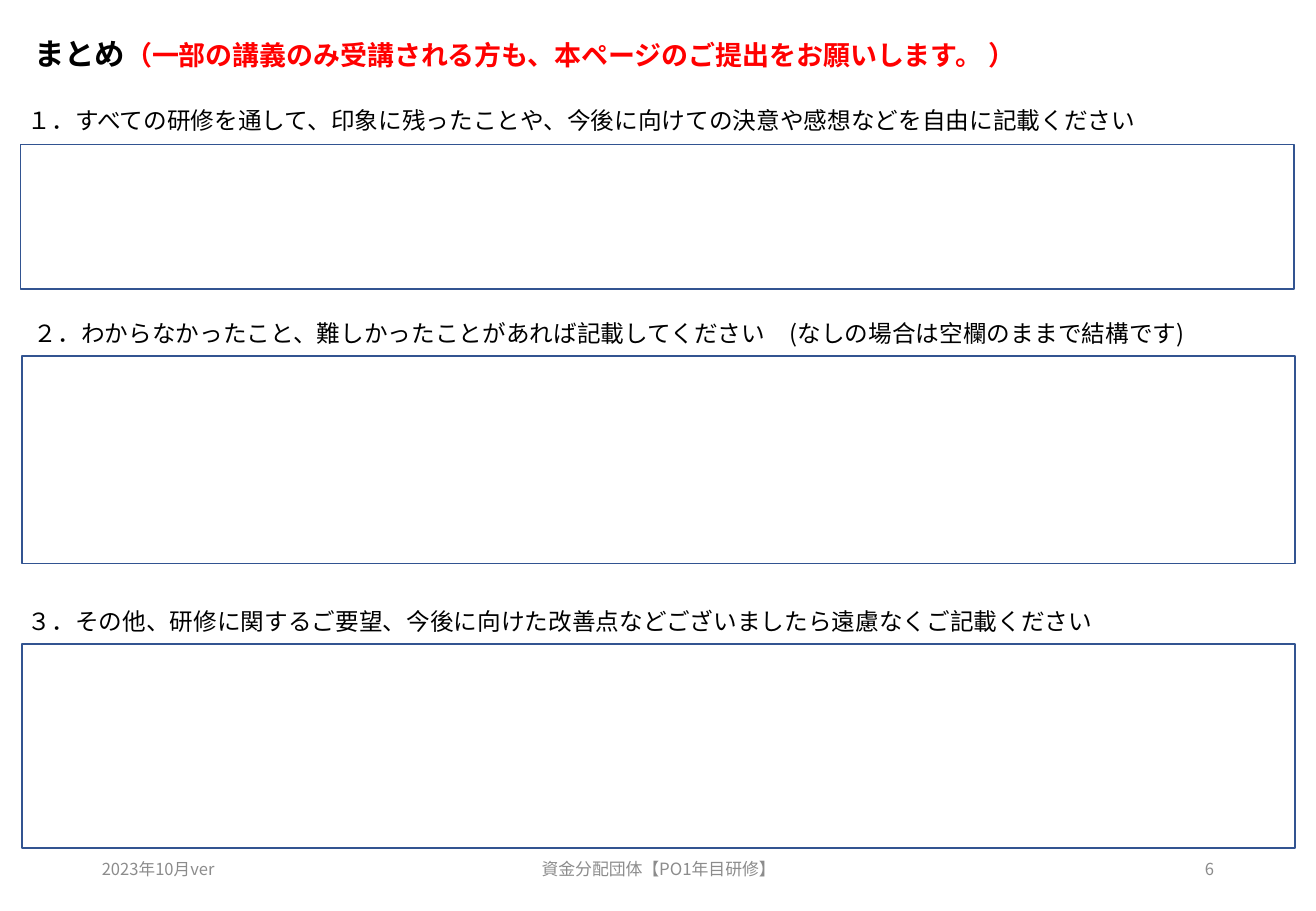
"""Build the summary page of a training worksheet."""
from dataclasses import dataclass
from typing import Any

from lxml import etree
from pptx import Presentation
from pptx.dml.color import RGBColor
from pptx.enum.shapes import MSO_SHAPE
from pptx.enum.text import MSO_ANCHOR, MSO_AUTO_SIZE, PP_ALIGN
from pptx.oxml.ns import qn
from pptx.util import Inches, Pt

RECT = MSO_SHAPE.RECTANGLE
TOP, MIDDLE = MSO_ANCHOR.TOP, MSO_ANCHOR.MIDDLE
LEFT, CENTER, RIGHT = PP_ALIGN.LEFT, PP_ALIGN.CENTER, PP_ALIGN.RIGHT
FIXED = MSO_AUTO_SIZE.NONE
WIDE, HIGH = Inches(10.83), Inches(7.5)


@dataclass(frozen=True)
class Theme:
    """Hold the colours, font and type sizes."""
    face: str = "Noto Sans CJK JP"
    ink: str = "000000"
    alert: str = "FF0000"
    muted: str = "8C8C8C"
    paper: str = "FFFFFF"
    edge: str = "325491"
    head: float = 18
    note: float = 16
    body: float = 14
    foot: float = 10
    small: float = 9.8


@dataclass(frozen=True)
class Area:
    """Give a place in percent of the slide's width and height."""
    x: float
    y: float
    w: float
    h: float

    def frame(self) -> dict[str, int]:
        """Turn the shares into shape lengths."""
        return {"left": int(WIDE * self.x / 100), "top": int(HIGH * self.y / 100),
                "width": int(WIDE * self.w / 100), "height": int(HIGH * self.h / 100)}


@dataclass(frozen=True)
class Topic:
    """Describe a question and its answer box."""
    text: str
    label: Area
    box: Area


@dataclass(frozen=True)
class Foot:
    """Describe one part of the footer."""
    text: str
    x: float
    w: float
    size: float
    align: Any


THEME = Theme()
SPAN, LINE = 96.77, 4.53
TITLE = Area(1.66, -0.53, 91.6, 13.2)
TOPICS = (
    Topic("１．すべての研修を通して、印象に残ったことや、今後に向けての決意や感想などを自由に記載ください",
          Area(1.2, 10.93, SPAN, LINE), Area(1.57, 15.87, SPAN, 15.87)),
    Topic("２．わからなかったこと、難しかったことがあれば記載してください　(なしの場合は空欄のままで結構です)",
          Area(1.66, 34.4, SPAN, LINE), Area(1.66, 39.07, SPAN, 22.8)),
    Topic("３．その他、研修に関するご要望、今後に向けた改善点などございましたら遠慮なくご記載ください",
          Area(1.2, 66, SPAN, LINE), Area(1.66, 70.67, SPAN, 22.4)),
)
FEET = (
    Foot("2023年10月ver", 6.83, 22.53, THEME.small, LEFT),
    Foot("資金分配団体【PO1年目研修】", 33.15, 33.8, THEME.foot, CENTER),
    Foot("6", 70.64, 22.53, THEME.small, RIGHT),
)


def apply(item: Any, values: dict[str, Any]) -> None:
    """Set each named value on the item."""
    for name, value in values.items():
        setattr(item, name, value)


def add_run(para: Any, text: str, size: float, tint: str, bold: bool = False) -> None:
    """Add a styled run with Latin and East Asian fonts."""
    run = para.add_run()
    run.text = text
    apply(run.font, {"name": THEME.face, "size": Pt(size), "bold": bold})
    run.font.color.rgb = RGBColor.from_string(tint)
    east = etree.Element(qn("a:ea"), typeface=THEME.face)
    run.font._element.find(qn("a:latin")).addnext(east)


def add_label(slide: Any, area: Area, text: str, size: float, tint: str,
              align: Any = LEFT, anchor: Any = TOP) -> None:
    """Add one line of text in its area."""
    shape = slide.shapes.add_textbox(**area.frame())
    apply(shape.text_frame, {"word_wrap": True, "vertical_anchor": anchor})
    para = shape.text_frame.paragraphs[0]
    para.alignment = align
    add_run(para, text, size, tint)


def add_box(slide: Any, area: Area) -> None:
    """Add an empty answer box."""
    box = slide.shapes.add_shape(RECT, **area.frame())
    box.shadow.inherit = False
    box.fill.solid()
    box.fill.fore_color.rgb = RGBColor.from_string(THEME.paper)
    box.line.color.rgb = RGBColor.from_string(THEME.edge)
    box.line.width = Pt(1)


def add_title(slide: Any) -> None:
    """Place and fill the title."""
    title = slide.shapes.title
    apply(title, TITLE.frame())
    apply(title.text_frame, {"word_wrap": True, "auto_size": FIXED,
                             "vertical_anchor": MIDDLE})
    para = title.text_frame.paragraphs[0]
    apply(para, {"alignment": LEFT, "line_spacing": 0.9})
    add_run(para, "まとめ", THEME.head, THEME.ink, True)
    add_run(para, "（一部の講義のみ受講される方も、本ページのご提出をお願いします。 ）",
            THEME.note, THEME.alert, True)


def main() -> None:
    """Build and save the slide."""
    deck = Presentation()
    apply(deck, {"slide_width": WIDE, "slide_height": HIGH})
    slide = deck.slides.add_slide(deck.slide_layouts[5])
    add_title(slide)
    for topic in TOPICS:
        add_box(slide, topic.box)
        add_label(slide, topic.label, topic.text, THEME.body, THEME.ink)
    for foot in FEET:
        add_label(slide, Area(foot.x, 92.67, foot.w, 5.33), foot.text,
                  foot.size, THEME.muted, foot.align, MIDDLE)
    deck.save("out.pptx")


if __name__ == "__main__":
    main()
